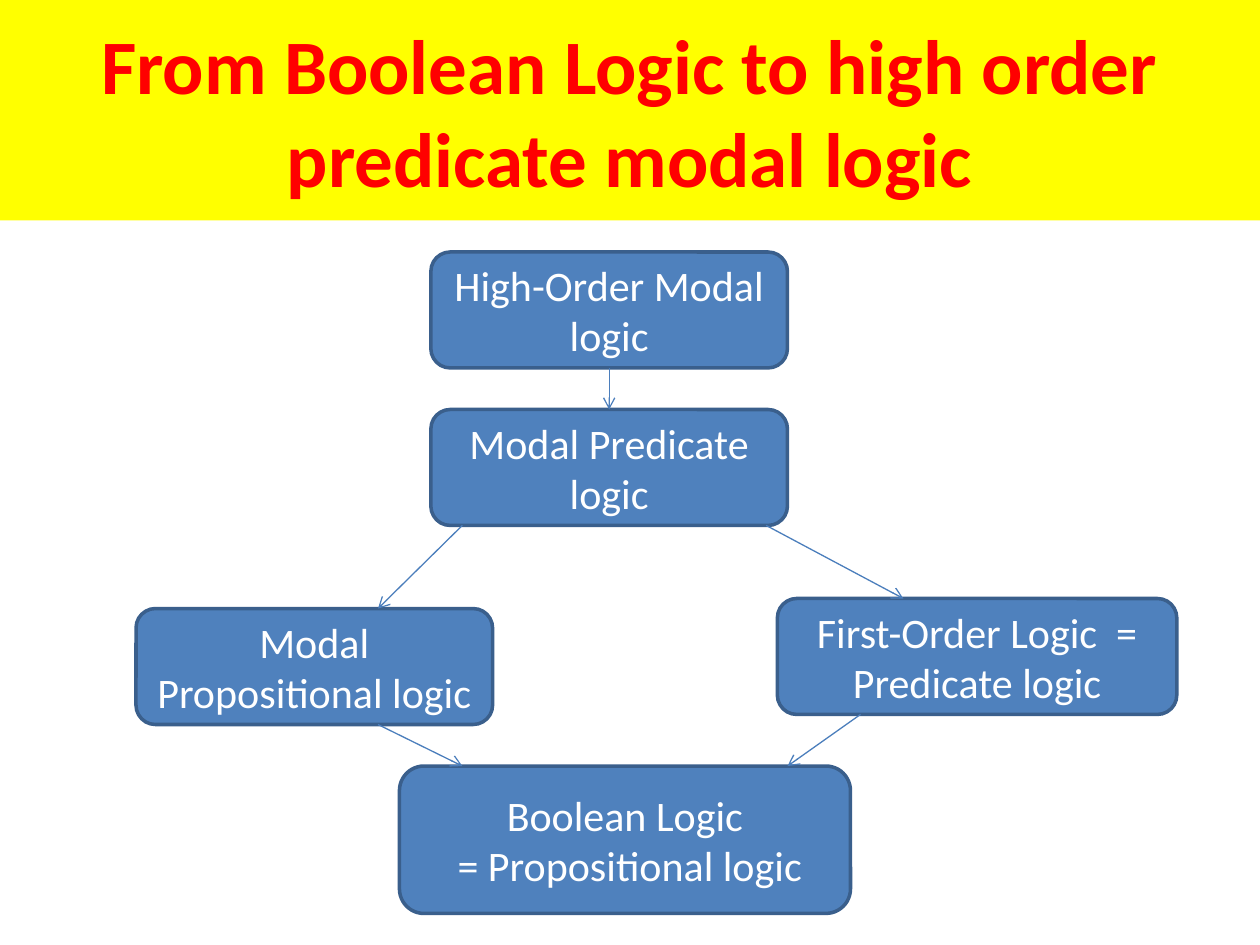
from dataclasses import dataclass

from lxml import etree
from pptx import Presentation
from pptx.dml.color import RGBColor
from pptx.enum.shapes import MSO_CONNECTOR, MSO_SHAPE
from pptx.enum.text import MSO_ANCHOR, PP_ALIGN
from pptx.oxml.ns import qn
from pptx.util import Inches, Pt

RECT = MSO_SHAPE.RECTANGLE
ROUNDED = MSO_SHAPE.ROUNDED_RECTANGLE
STRAIGHT = MSO_CONNECTOR.STRAIGHT
MIDDLE = MSO_ANCHOR.MIDDLE
CENTER = PP_ALIGN.CENTER
TOP, BOTTOM = 0, 2

FONT = "Calibri"
YELLOW, RED, WHITE = "FFFF00", "FF0000", "FFFFFF"
BOX_FILL, BOX_LINE, ARROW_LINE = "4F81BD", "3A5F8C", "4B7EBC"


@dataclass
class Box:
    text: str
    left: float
    top: float
    width: float = 2.83
    height: float = 0.92


@dataclass
class Arrow:
    x1: float
    y1: float
    x2: float
    y2: float


HIGH_ORDER = Box("High-Order Modal logic", 3.42, 2)
MODAL_PREDICATE = Box("Modal Predicate logic", 3.42, 3.25)
LOWER_BOXES = [
    Box("Boolean Logic\n = Propositional logic", 3.17, 6.08, 3.58, 1.17),
    Box("Modal Propositional logic", 1.08, 4.83),
    Box("First-Order Logic  = Predicate logic", 6.17, 4.75, 3.17),
]
SLANTED_ARROWS = [
    Arrow(6.08, 4.17, 7.17, 4.75),
    Arrow(3.67, 4.17, 3, 4.83),
    Arrow(3, 5.75, 3.67, 6.08),
    Arrow(6.83, 5.67, 6.25, 6.08),
]


def rgb(color: str) -> RGBColor:
    return RGBColor.from_string(color)


def write(sp, text: str, *, size: float, color: str, bold: bool = False) -> None:
    """Fill a shape with centred text, one paragraph per line."""
    tf = sp.text_frame
    tf.word_wrap = True
    tf.vertical_anchor = MIDDLE
    for i, line in enumerate(text.split("\n")):
        p = tf.paragraphs[0] if i == 0 else tf.add_paragraph()
        p.alignment = CENTER
        r = p.add_run()
        r.text = line
        r.font.name = FONT
        r.font.size = Pt(size)
        r.font.bold = bold
        r.font.color.rgb = rgb(color)


def add_filled(slide, kind, box: Box, fill: str):
    sp = slide.shapes.add_shape(kind, Inches(box.left), Inches(box.top),
                                Inches(box.width), Inches(box.height))
    sp.shadow.inherit = False
    sp.fill.solid()
    sp.fill.fore_color.rgb = rgb(fill)
    return sp


def add_title(slide, text: str) -> None:
    sp = add_filled(slide, RECT, Box(text, 0, 0, 10, 1.75), YELLOW)
    sp.line.fill.background()
    write(sp, text, size=44, color=RED, bold=True)


def add_box(slide, box: Box):
    sp = add_filled(slide, ROUNDED, box, BOX_FILL)
    sp.line.color.rgb = rgb(BOX_LINE)
    sp.line.width = Pt(2)
    write(sp, box.text, size=24, color=WHITE)
    return sp


def add_arrow(slide, arrow: Arrow):
    cxn = slide.shapes.add_connector(STRAIGHT, Inches(arrow.x1), Inches(arrow.y1),
                                     Inches(arrow.x2), Inches(arrow.y2))
    cxn.line.color.rgb = rgb(ARROW_LINE)
    cxn.line.width = Pt(0.75)
    etree.SubElement(cxn.line._get_or_add_ln(), qn("a:tailEnd"), type="arrow")
    etree.SubElement(cxn._element.spPr, qn("a:effectLst"))
    return cxn


def main() -> None:
    prs = Presentation()
    prs.slide_width, prs.slide_height = Inches(10), Inches(7.5)
    slide = prs.slides.add_slide(prs.slide_layouts[6])

    add_title(slide, "From Boolean Logic to high order predicate modal logic")
    for box in LOWER_BOXES:
        add_box(slide, box)
    modal_predicate = add_box(slide, MODAL_PREDICATE)
    high_order = add_box(slide, HIGH_ORDER)

    down = add_arrow(slide, Arrow(4.83, 2.92, 4.83, 3.25))
    down.begin_connect(high_order, BOTTOM)
    down.end_connect(modal_predicate, TOP)
    for arrow in SLANTED_ARROWS:
        add_arrow(slide, arrow)

    prs.save("out.pptx")


if __name__ == "__main__":
    main()
